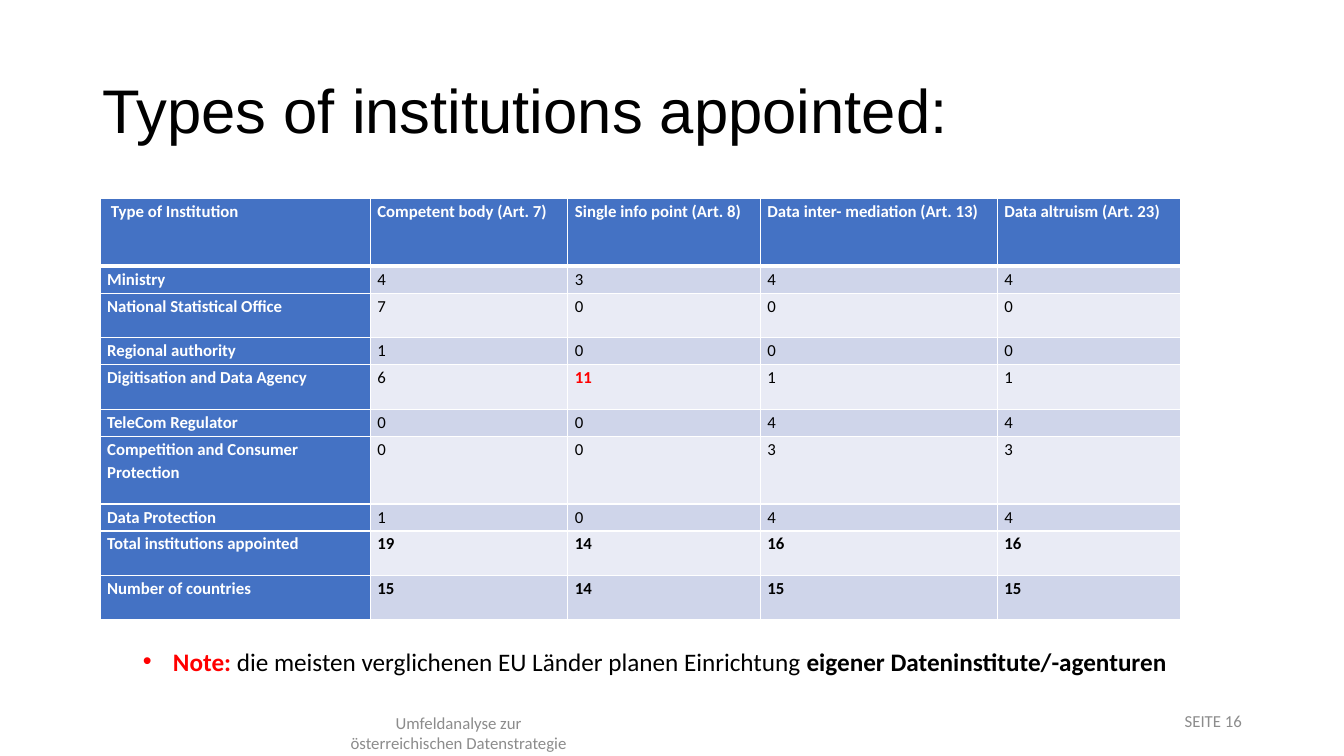
from lxml import etree
from pptx import Presentation
from pptx.dml.color import RGBColor
from pptx.enum.text import MSO_ANCHOR, PP_ALIGN
from pptx.oxml.ns import qn
from pptx.util import Cm, Pt

BLACK = RGBColor(0x00, 0x00, 0x00)
WHITE = RGBColor(0xFF, 0xFF, 0xFF)
RED = RGBColor(0xFF, 0x00, 0x00)
GRAY = RGBColor(0x8C, 0x8C, 0x8C)
BLUE = RGBColor(0x44, 0x72, 0xC4)
DARK_BAND = RGBColor(0xCF, 0xD5, 0xEA)
LIGHT_BAND = RGBColor(0xE9, 0xEB, 0xF5)

LEFT, CENTER, RIGHT = PP_ALIGN.LEFT, PP_ALIGN.CENTER, PP_ALIGN.RIGHT
TOP, MIDDLE = MSO_ANCHOR.TOP, MSO_ANCHOR.MIDDLE

COLUMN_WIDTHS = [6.81, 4.98, 4.85, 5.97, 4.63]
ONE_LINE, TWO_LINES, THREE_LINES = 0.68, 1.12, 1.71
HEADER = [
    " Type of Institution",
    "Competent body (Art. 7)",
    "Single info point (Art. 8)",
    "Data inter- mediation (Art. 13)",
    "Data altruism (Art. 23)",
]
INSTITUTIONS = [
    ("Ministry", [4, 3, 4, 4], ONE_LINE),
    ("National Statistical Office", [7, 0, 0, 0], TWO_LINES),
    ("Regional authority", [1, 0, 0, 0], ONE_LINE),
    ("Digitisation and Data Agency", [6, 11, 1, 1], TWO_LINES),
    ("TeleCom Regulator", [0, 0, 4, 4], ONE_LINE),
    ("Competition and Consumer Protection", [0, 0, 3, 3], THREE_LINES),
    ("Data Protection", [1, 0, 4, 4], ONE_LINE),
]
TOTALS = [
    ("Total institutions appointed", [19, 14, 16, 16], TWO_LINES),
    ("Number of countries", [15, 14, 15, 15], TWO_LINES),
]
HIGHLIGHT = ("Digitisation and Data Agency", 11)


def add_run(paragraph, text, size, color, bold=False, font="Calibri"):
    """Append one formatted run to a paragraph."""
    run = paragraph.add_run()
    run.text = text
    run.font.name = font
    run.font.size = Pt(size)
    run.font.bold = bold
    run.font.color.rgb = color


def add_text_box(slide, left, top, width, height, align=LEFT, anchor=TOP):
    """Add a wrapping text box and return its first paragraph."""
    shape = slide.shapes.add_textbox(Cm(left), Cm(top), Cm(width), Cm(height))
    shape.text_frame.word_wrap = True
    shape.text_frame.vertical_anchor = anchor
    paragraph = shape.text_frame.paragraphs[0]
    paragraph.alignment = align
    return paragraph


def add_bullet(paragraph, indent):
    """Give a paragraph a hanging round bullet."""
    properties = paragraph._p.get_or_add_pPr()
    properties.set("marL", str(Cm(indent)))
    properties.set("indent", str(-Cm(indent)))
    etree.SubElement(properties, qn("a:buFont"), typeface="Arial")
    etree.SubElement(properties, qn("a:buChar"), char="•")


def set_borders(cell, top=1, bottom=1):
    """Draw white lines around a cell, with widths in points."""
    properties = cell._tc.get_or_add_tcPr()
    for side, width in (("L", 1), ("R", 1), ("T", top), ("B", bottom)):
        line = etree.SubElement(properties, qn(f"a:ln{side}"), w=str(Pt(width)))
        fill = etree.SubElement(line, qn("a:solidFill"))
        etree.SubElement(fill, qn("a:srgbClr"), val=str(WHITE))


def fill_cell(cell, text, fill, color, bold, top=1, bottom=1):
    """Set the text, borders and fill of a table cell."""
    cell.margin_left = cell.margin_right = Cm(0.18)
    cell.margin_top = cell.margin_bottom = Cm(0)
    set_borders(cell, top, bottom)
    cell.fill.solid()
    cell.fill.fore_color.rgb = fill
    paragraph = cell.text_frame.paragraphs[0]
    paragraph.line_spacing = 1.15
    paragraph.space_after = Pt(8)
    add_run(paragraph, text, 12, color, bold)


def add_institution_table(slide):
    """Add the table of institutions by type and article."""
    body = INSTITUTIONS + TOTALS
    heights = [THREE_LINES] + [height for _, _, height in body]
    frame = slide.shapes.add_table(
        len(heights), len(COLUMN_WIDTHS), Cm(2.52), Cm(5),
        Cm(sum(COLUMN_WIDTHS)), Cm(sum(heights)),
    )
    table = frame.table
    for column, width in zip(table.columns, COLUMN_WIDTHS):
        column.width = Cm(width)
    for row, height in zip(table.rows, heights):
        row.height = Cm(height)

    for column, heading in enumerate(HEADER):
        fill_cell(table.cell(0, column), heading, BLUE, WHITE, True, bottom=3)
    for row, (name, counts, _) in enumerate(body, start=1):
        top = 3 if row == 1 else 1
        band = DARK_BAND if row % 2 else LIGHT_BAND
        is_total = row > len(INSTITUTIONS)
        fill_cell(table.cell(row, 0), name, BLUE, WHITE, True, top)
        for column, count in enumerate(counts, start=1):
            highlighted = (name, count) == HIGHLIGHT
            color = RED if highlighted else BLACK
            bold = is_total or highlighted
            fill_cell(table.cell(row, column), str(count), band, color, bold, top)


def add_note(slide):
    """Add the bulleted note below the table."""
    paragraph = add_text_box(slide, 3.35, 16.15, 28.3, 1.02)
    add_bullet(paragraph, 0.76)
    add_run(paragraph, "Note: ", 18, RED, True)
    add_run(paragraph, "die meisten verglichenen EU Länder planen Einrichtung ", 18, BLACK)
    add_run(paragraph, "eigener Dateninstitute/-agenturen", 18, BLACK, True)


def add_footer(slide):
    """Add the page number and the two-line footer."""
    page = add_text_box(slide, 23.93, 17.65, 7.62, 1.02, RIGHT, MIDDLE)
    add_run(page, "SEITE 16", 12, GRAY)
    footer = add_text_box(slide, 6.2, 18.03, 10.72, 0.86, CENTER, MIDDLE)
    add_run(footer, "Umfeldanalyse zur", 12, GRAY)
    footer.add_line_break()
    add_run(footer, "österreichischen Datenstrategie", 12, GRAY)


def main():
    """Build the slide and save the presentation."""
    presentation = Presentation()
    presentation.slide_width = Cm(33.87)
    presentation.slide_height = Cm(19.05)
    slide = presentation.slides.add_slide(presentation.slide_layouts[6])
    title = add_text_box(slide, 2.33, 1.01, 29.21, 3.68, anchor=MIDDLE)
    title.line_spacing = 0.9
    add_run(title, "Types of institutions appointed:", 44, BLACK, font="Arial")
    add_institution_table(slide)
    add_note(slide)
    add_footer(slide)
    presentation.save("out.pptx")


if __name__ == "__main__":
    main()
